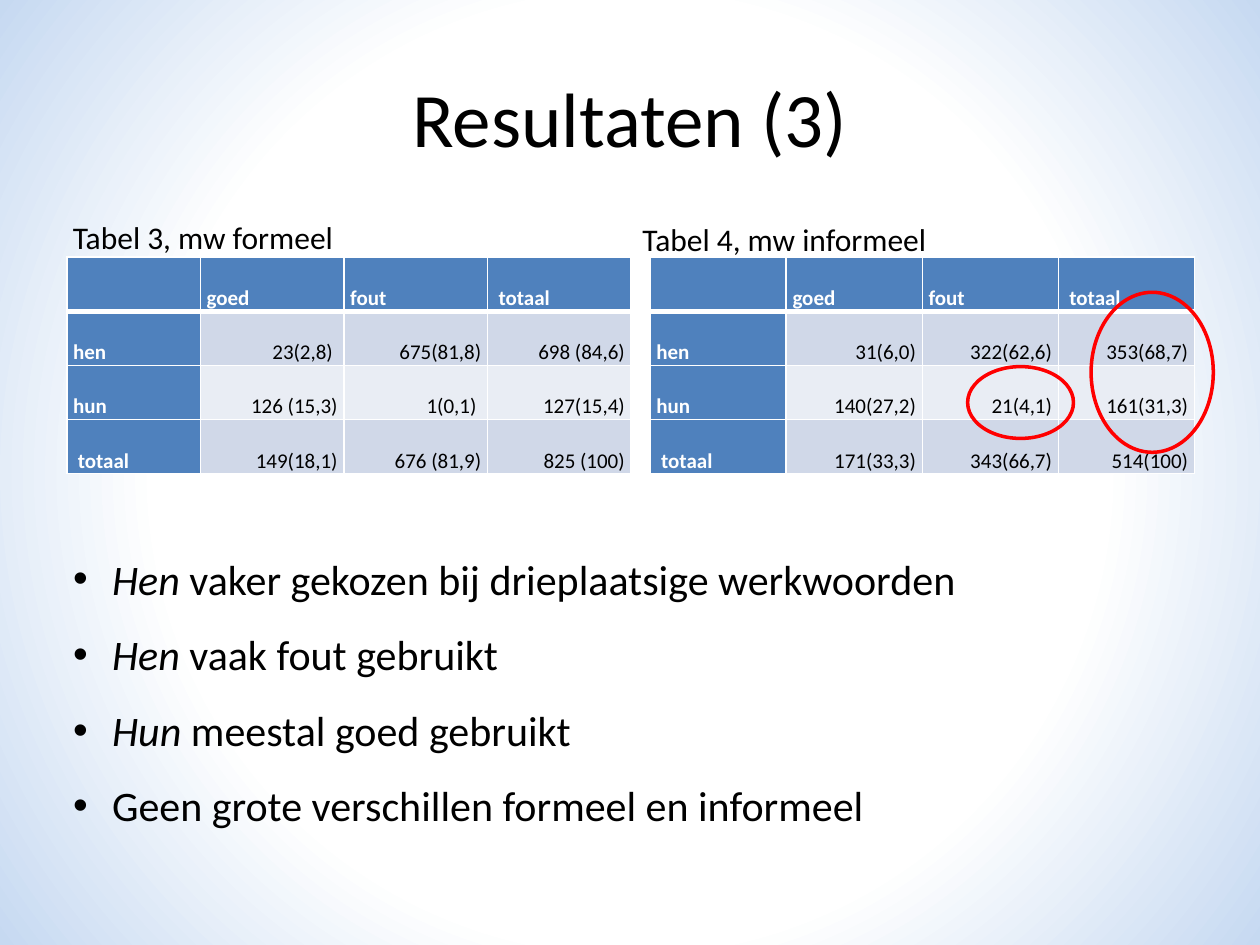
from lxml.etree import SubElement
from pptx import Presentation
from pptx.dml.color import RGBColor
from pptx.enum.shapes import MSO_SHAPE as Shape
from pptx.enum.text import MSO_ANCHOR as Anchor, MSO_AUTO_SIZE as AutoSize, PP_ALIGN as Align
from pptx.oxml import parse_xml
from pptx.oxml.ns import nsdecls, qn
from pptx.util import Inches, Pt

BLACK, WHITE, RED = "000000", "FFFFFF", "FF0000"
HEADER, BANDS = "4F81BD", ("D0D8E8", "E9EDF4")
GLOW = [(0, WHITE), (60, WHITE), (100, "C6D9F1")]

FORMAL = [
    ["", "goed", "fout", " totaal"],
    ["hen", "23(2,8) ", "675(81,8)", "698 (84,6)"],
    ["hun", "126 (15,3)", "1(0,1) ", "127(15,4)"],
    [" totaal", "149(18,1)", "676 (81,9)", "825 (100)"],
]
INFORMAL = [
    ["", "goed", "fout", " totaal"],
    ["hen", "31(6,0)", "322(62,6)", "353(68,7)"],
    ["hun", "140(27,2)", "21(4,1)", "161(31,3)"],
    [" totaal", "171(33,3)", "343(66,7)", "514(100)"],
]
# Each point is an italic opening and the plain rest
POINTS = [
    ("Hen", " vaker gekozen bij drieplaatsige werkwoorden"),
    ("Hen", " vaak fout gebruikt"),
    ("Hun ", "meestal goed gebruikt"),
    ("", "Geen grote verschillen formeel en informeel"),
]


def color(value):
    return RGBColor.from_string(value)


def add_text(para, text, size=18, ink=BLACK, bold=False, italic=False,
             align=Align.LEFT, spacing=None):
    para.alignment = align
    if spacing:
        para.line_spacing = spacing
    if text:
        span = para.add_run()
        span.text = text
        font = span.font
        font.name, font.size = "Calibri", Pt(size)
        font.bold, font.italic = bold, italic
        font.color.rgb = color(ink)


class SlideBuilder:
    def __init__(self, page):
        self.page = page

    def background(self, stops):
        self.page.background.fill.solid()
        properties = self.page.element.find(".//" + qn("p:bgPr"))
        marks = "".join(
            f'<a:gs pos="{place * 1000}"><a:srgbClr val="{ink}"/></a:gs>' for place, ink in stops)
        gradient = parse_xml(
            f'<a:gradFill {nsdecls("a")} rotWithShape="1"><a:gsLst>{marks}</a:gsLst>'
            '<a:path path="circle"><a:fillToRect l="50000" t="50000" r="50000" b="50000"/>'
            '</a:path></a:gradFill>')
        properties.replace(properties.find(qn("a:solidFill")), gradient)

    def place(self, box, left, top, width, height):
        box.left, box.top = Inches(left), Inches(top)
        box.width, box.height = Inches(width), Inches(height)

    def title(self, text, *area):
        box = self.page.shapes.title
        self.place(box, *area)
        box.text_frame.vertical_anchor = Anchor.MIDDLE
        add_text(box.text_frame.paragraphs[0], text, size=44, align=Align.CENTER)

    def bullets(self, points, *area):
        box = self.page.placeholders[1]
        self.place(box, *area)
        frame = box.text_frame
        frame.auto_size = AutoSize.NONE
        for index, (opening, rest) in enumerate(points):
            para = frame.add_paragraph() if index else frame.paragraphs[0]
            para.space_before = Pt(0)
            add_text(para, opening, size=24, italic=True, spacing=1.5)
            add_text(para, rest, size=24)
            properties = para._p.get_or_add_pPr()
            properties.set("marL", str(Inches(0.31)))
            properties.set("indent", str(-Inches(0.31)))
            SubElement(properties, qn("a:buFont")).set("typeface", "Arial")
            SubElement(properties, qn("a:buChar")).set("char", "•")

    def caption(self, text, left, top, width, height):
        box = self.page.shapes.add_textbox(
            Inches(left), Inches(top), Inches(width), Inches(height))
        box.text_frame.word_wrap = True
        add_text(box.text_frame.paragraphs[0], text)

    def borders(self, cell, row):
        properties = cell._tc.get_or_add_tcPr()
        # The line between the header row and the body is thicker
        widths = {"L": 1, "R": 1, "T": 3 if row == 1 else 1, "B": 3 if row == 0 else 1}
        for index, (side, width) in enumerate(widths.items()):
            properties.insert(index, parse_xml(
                f'<a:ln{side} {nsdecls("a")} w="{Pt(width)}"><a:solidFill>'
                f'<a:srgbClr val="{WHITE}"/></a:solidFill></a:ln{side}>'))

    def table(self, rows, left, top, widths, row_height):
        table = self.page.shapes.add_table(
            len(rows), len(widths), Inches(left), Inches(top),
            Inches(sum(widths)), Inches(row_height * len(rows))).table
        for column, width in zip(table.columns, widths):
            column.width = Inches(width)
        for r, values in enumerate(rows):
            for c, value in enumerate(values):
                cell = table.cell(r, c)
                head = r == 0 or c == 0
                cell.margin_left = cell.margin_right = Inches(0.05)
                cell.margin_top = cell.margin_bottom = 0
                cell.vertical_anchor = Anchor.BOTTOM
                cell.fill.solid()
                cell.fill.fore_color.rgb = color(HEADER if head else BANDS[(r - 1) % 2])
                self.borders(cell, r)
                add_text(cell.text_frame.paragraphs[0], value, size=12, bold=head,
                         ink=WHITE if head else BLACK, spacing=1.07,
                         align=Align.LEFT if head else Align.RIGHT)

    def ring(self, left, top, width, height):
        ring = self.page.shapes.add_shape(
            Shape.OVAL, Inches(left), Inches(top), Inches(width), Inches(height))
        ring.shadow.inherit = False
        ring.fill.background()
        ring.line.color.rgb = color(RED)
        ring.line.width = Pt(2)


def main():
    deck = Presentation()
    deck.slide_width, deck.slide_height = Inches(10), Inches(7.5)
    slide = SlideBuilder(deck.slides.add_slide(deck.slide_layouts[1]))
    slide.background(GLOW)
    slide.title("Resultaten (3)", 0.5, 0.3, 9, 1.25)

    # Two tables side by side with their captions
    slide.table(FORMAL, 0.53, 2.04, [1.06] + [1.14] * 3, 0.43)
    slide.table(INFORMAL, 5.16, 2.04, [1.08] * 4, 0.43)
    slide.caption("Tabel 3, mw formeel", 0.48, 1.68, 2.28, 0.4)
    slide.caption("Tabel 4, mw informeel", 5, 1.7, 3.78, 0.4)

    # Conclusions
    slide.bullets(POINTS, 0.48, 4.14, 8.97, 2.52)

    # Rings around the striking values
    slide.ring(7.68, 2.91, 0.84, 0.57)
    slide.ring(8.66, 2.32, 0.97, 1.27)
    deck.save("out.pptx")


if __name__ == "__main__":
    main()
